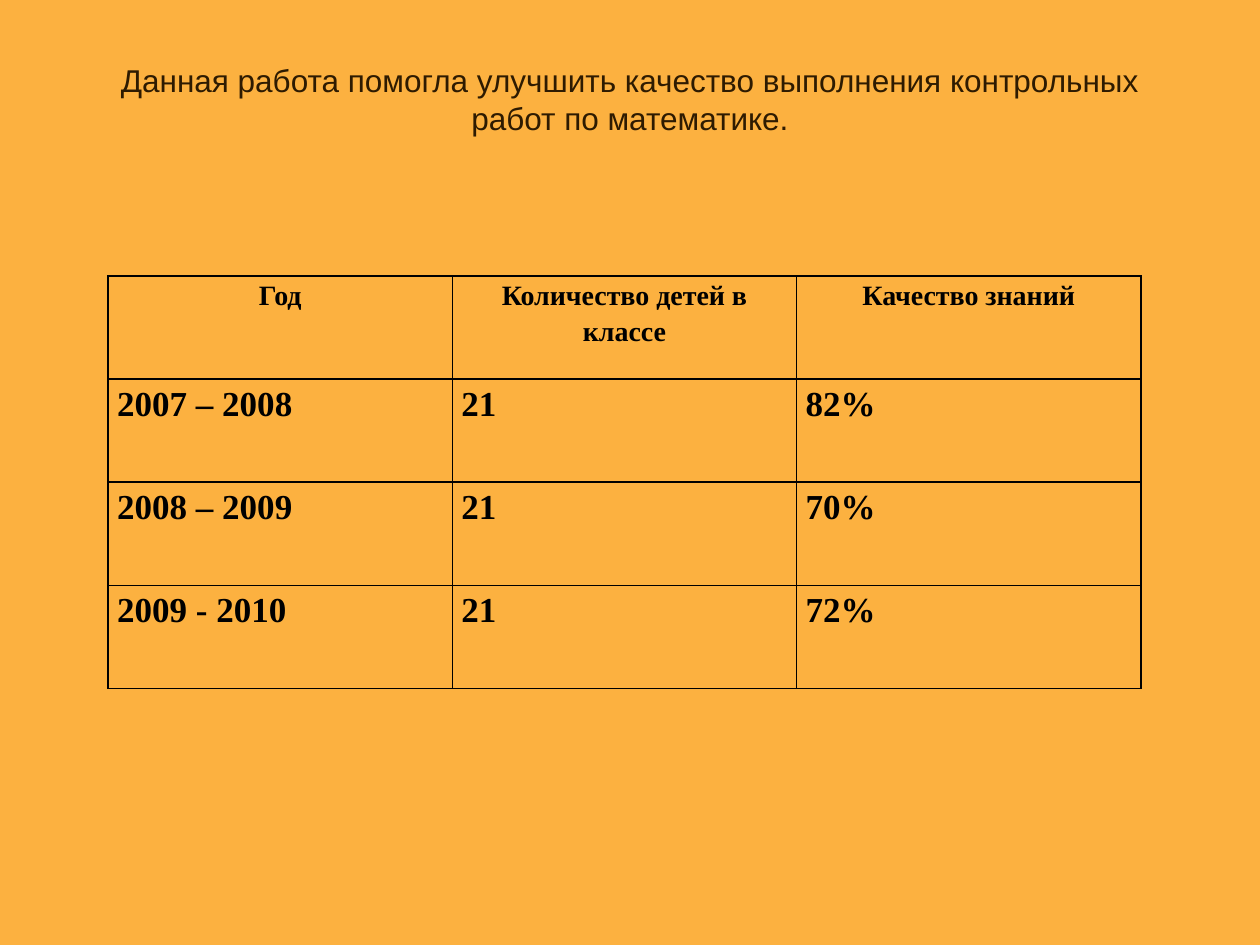
from dataclasses import dataclass

from lxml.etree import SubElement
from pptx import Presentation
from pptx.dml.color import RGBColor
from pptx.enum.text import MSO_ANCHOR as Anchor, PP_ALIGN as Align
from pptx.oxml.ns import qn
from pptx.util import Cm, Pt


@dataclass(frozen=True)
class Theme:
    background: str = "FCB140"
    title_color: str = "2E1B01"
    ink: str = "000000"
    title_font: str = "Arial"
    table_font: str = "Times New Roman"
    title_size: int = 18
    header_size: int = 16
    body_size: int = 20
    border_width: int = 1


@dataclass(frozen=True)
class YearResult:
    year: str
    children: str
    quality: str


THEME = Theme()
TITLE = "Данная работа помогла улучшить качество выполнения контрольных работ по математике."
HEADERS = ("Год", "Количество детей в классе", "Качество знаний")
RESULTS = (
    YearResult("2007 – 2008", "21", "82%"),
    YearResult("2008 – 2009", "21", "70%"),
    YearResult("2009 - 2010", "21", "72%"),
)


def write_text(frame, text: str, *, font: str, size: int, color: str,
               align: Align, bold: bool = False, line_spacing: float = 1.0) -> None:
    frame.word_wrap = True
    paragraph = frame.paragraphs[0]
    paragraph.alignment = align
    paragraph.line_spacing = line_spacing
    run = paragraph.add_run()
    run.text = text
    run.font.name = font
    run.font.size = Pt(size)
    run.font.bold = bold
    run.font.color.rgb = RGBColor.from_string(color)


def add_borders(cell) -> None:
    properties = cell._tc.get_or_add_tcPr()
    for side in ("a:lnL", "a:lnR", "a:lnT", "a:lnB"):
        line = SubElement(properties, qn(side), w=str(Pt(THEME.border_width)))
        fill = SubElement(line, qn("a:solidFill"))
        SubElement(fill, qn("a:srgbClr"), val=THEME.ink)


def add_title(slide) -> None:
    frame = slide.shapes.add_textbox(Cm(1.27), Cm(0.99), Cm(22.86), Cm(2.77)).text_frame
    frame.vertical_anchor = Anchor.TOP
    frame.margin_top = Cm(0.25)
    write_text(frame, TITLE, font=THEME.title_font, size=THEME.title_size,
               color=THEME.title_color, align=Align.CENTER)


def fill_cell(cell, text: str, *, is_header: bool) -> None:
    cell.margin_left = cell.margin_right = Cm(0.18)
    cell.margin_top = cell.margin_bottom = 0
    add_borders(cell)
    cell.fill.background()
    write_text(cell.text_frame, text, font=THEME.table_font, color=THEME.ink,
               size=THEME.header_size if is_header else THEME.body_size,
               align=Align.CENTER if is_header else Align.JUSTIFY,
               bold=True, line_spacing=1.15)


def add_results_table(slide) -> None:
    rows = [HEADERS] + [(item.year, item.children, item.quality) for item in RESULTS]
    column_width, row_height = Cm(6.94), Cm(2.08)
    table = slide.shapes.add_table(
        len(rows), len(HEADERS), Cm(2.18), Cm(5.56),
        column_width * len(HEADERS), row_height * len(rows)).table
    table.first_row = table.horz_banding = False
    for row_index, texts in enumerate(rows):
        for column_index, text in enumerate(texts):
            fill_cell(table.cell(row_index, column_index), text, is_header=row_index == 0)


def main() -> None:
    presentation = Presentation()
    presentation.slide_width, presentation.slide_height = Cm(25.4), Cm(19.05)
    slide = presentation.slides.add_slide(presentation.slide_layouts[6])

    # Background
    slide.background.fill.solid()
    slide.background.fill.fore_color.rgb = RGBColor.from_string(THEME.background)

    # Heading and yearly results
    add_title(slide)
    add_results_table(slide)
    presentation.save("out.pptx")


if __name__ == "__main__":
    main()
